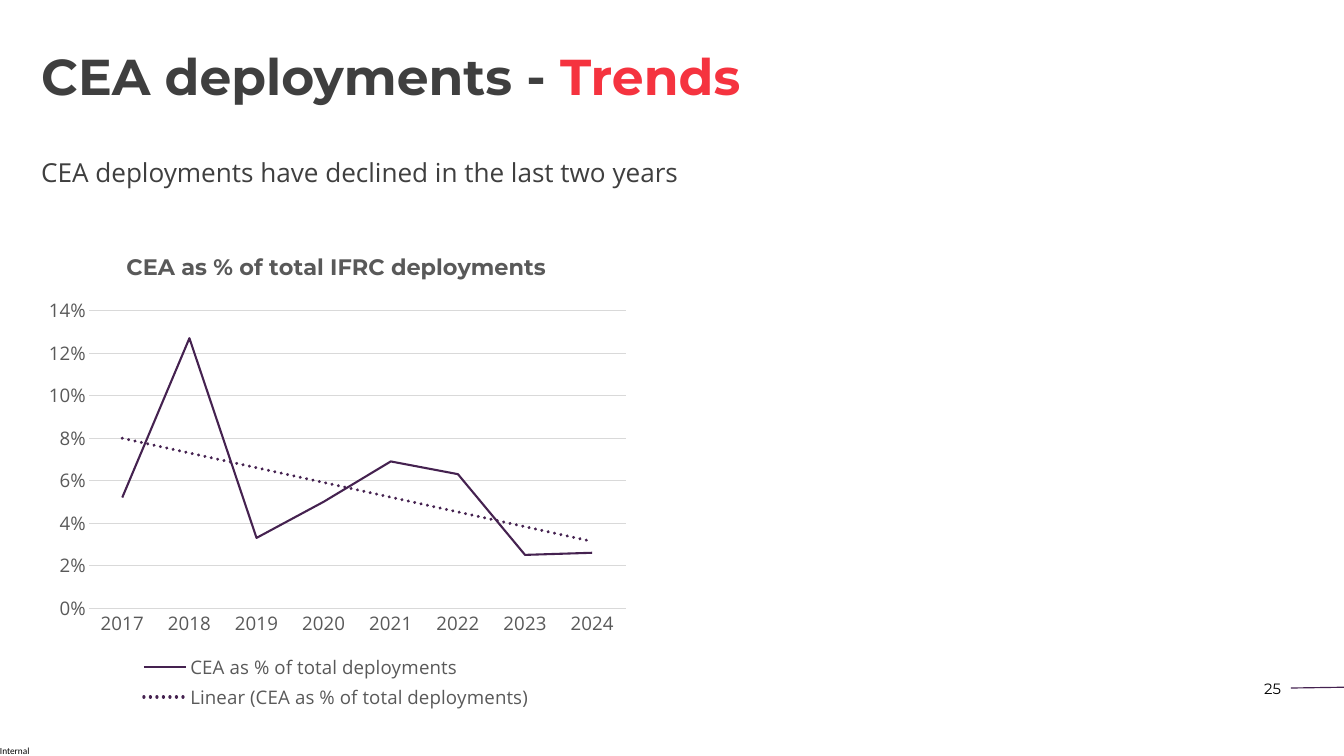
from lxml import etree
from pptx import Presentation
from pptx import util as u
from pptx.chart.data import CategoryChartData
from pptx.dml.color import RGBColor
from pptx.enum import chart as ch, shapes, text
from pptx.oxml import parse_xml
from pptx.oxml.ns import nsdecls, qn

INK, RED, PURPLE, GREY, RULE, BLACK = "3F3F3F", "F5333F", "452250", "595959", "D9D9D9", "000000"
HEADING = [("CEA deployments - ", INK), ("Trends", RED)]
MESSAGE = "CEA deployments have declined in the last two years"
CHART_TITLE = "CEA as % of total IFRC deployments"
SERIES = "CEA as % of total deployments"
SHARES = {"2017": 0.052, "2018": 0.127, "2019": 0.033, "2020": 0.05,
          "2021": 0.069, "2022": 0.063, "2023": 0.025, "2024": 0.026}
PLOT_AREA = {"x": 0.09, "y": 0.16, "w": 0.89, "h": 0.62}
PAGE, LABEL = "25", "Internal"


def colour(value):
    return RGBColor.from_string(value)


def style(font, size, name, ink, bold=False):
    font.size, font.name, font.bold = u.Pt(size), name, bold
    font.color.rgb = colour(ink)


def stroke(line, ink, width):
    line.color.rgb = colour(ink)
    line.width = u.Pt(width)


def place(shape, *box):
    shape.left, shape.top, shape.width, shape.height = map(u.Cm, box)


def add_heading(slide):
    heading = slide.shapes.title
    place(heading, 1.3, 2.01, 39.34, 2.11)
    frame = heading.text_frame
    frame.auto_size = text.MSO_AUTO_SIZE.NONE
    frame.vertical_anchor = text.MSO_ANCHOR.MIDDLE
    line = frame.paragraphs[0]
    line.alignment, line.line_spacing = text.PP_ALIGN.LEFT, 0.8
    for words, ink in HEADING:
        run = line.add_run()
        run.text = words
        style(run.font, 54, "Montserrat", ink, True)


def add_message(slide):
    message = slide.placeholders[1]
    place(message, 1.3, 5.77, 47.7, 1.45)
    frame = message.text_frame
    frame.text = MESSAGE
    frame.auto_size = text.MSO_AUTO_SIZE.NONE
    line = frame.paragraphs[0]
    props = line._p.get_or_add_pPr()
    props.set("marL", "0")
    props.set("indent", "0")
    etree.SubElement(props, qn("a:buNone"))
    line.space_before, line.space_after = u.Pt(0), u.Pt(18)
    style(line.runs[0].font, 28, "Open Sans", INK)


def add_trend_line(series):
    series._element.find(qn("c:cat")).addprevious(parse_xml(
        f'<c:trendline {nsdecls("c", "a")}><c:spPr><a:ln w="{u.Pt(3.5)}" cap="rnd"><a:solidFill>'
        f'<a:srgbClr val="{PURPLE}"/></a:solidFill><a:prstDash val="sysDot"/></a:ln></c:spPr>'
        '<c:trendlineType val="linear"/><c:dispRSqr val="0"/><c:dispEq val="0"/></c:trendline>'))


def fix_plot_area(chart):
    area = chart._chartSpace.chart.plotArea
    for layout in area.findall(qn("c:layout")):
        area.remove(layout)
    sides = "".join(f'<c:{side} val="{share}"/>' for side, share in PLOT_AREA.items())
    area.insert(0, parse_xml(
        f'<c:layout {nsdecls("c")}><c:manualLayout><c:layoutTarget val="inner"/>'
        f'<c:xMode val="edge"/><c:yMode val="edge"/>{sides}</c:manualLayout></c:layout>'))


def add_trend_chart(slide):
    data = CategoryChartData(number_format="0%")
    data.categories = list(SHARES)
    data.add_series(SERIES, list(SHARES.values()))
    box = map(u.Cm, (1.3, 8.84, 22.81, 18.14))
    chart = slide.shapes.add_chart(ch.XL_CHART_TYPE.LINE, *box, data).chart
    style(chart.font, 20, "Open Sans", BLACK)

    chart.has_title = True
    chart.chart_title.include_in_layout = False
    caption = chart.chart_title.text_frame
    caption.text = CHART_TITLE
    style(caption.paragraphs[0].runs[0].font, 24, "Montserrat", GREY, True)

    chart.has_legend = True
    chart.legend.position = ch.XL_LEGEND_POSITION.BOTTOM
    chart.legend.include_in_layout = False
    style(chart.legend.font, 20, "Open Sans", GREY)

    years, shares = chart.category_axis, chart.value_axis
    for axis in (years, shares):
        axis.major_tick_mark = axis.minor_tick_mark = ch.XL_TICK_MARK.NONE
        style(axis.tick_labels.font, 20, "Open Sans", GREY)
    stroke(years.format.line, RULE, 0.75)
    stroke(shares.major_gridlines.format.line, RULE, 0.75)
    shares.format.line.fill.background()
    shares.minimum_scale, shares.maximum_scale, shares.major_unit = 0, 0.14, 0.02
    shares.tick_labels.number_format = "0%"
    shares.tick_labels.number_format_is_linked = False

    plot = chart.plots[0]
    plot.vary_by_categories = False
    series = plot.series[0]
    series.smooth = False
    series.marker.style = ch.XL_MARKER_STYLE.NONE
    stroke(series.format.line, PURPLE, 2.25)
    add_trend_line(series)
    fix_plot_area(chart)


def add_note(slide, words, box, size, name, align, inset):
    frame = slide.shapes.add_textbox(*map(u.Cm, box)).text_frame
    frame.text, frame.word_wrap = words, True
    if not inset:
        frame.margin_left = frame.margin_right = frame.margin_top = frame.margin_bottom = 0
    frame.paragraphs[0].alignment = align
    style(frame.paragraphs[0].runs[0].font, size, name, BLACK)


def add_footer(slide):
    ends = map(u.Cm, (48.79, 26.01, 50.8, 25.98))
    dash = slide.shapes.add_connector(shapes.MSO_CONNECTOR.STRAIGHT, *ends)
    stroke(dash.line, PURPLE, 1.25)
    etree.SubElement(dash._element.spPr, qn("a:effectLst"))
    add_note(slide, PAGE, (46.84, 25.55, 1.83, 0.94), 16, "Montserrat", text.PP_ALIGN.RIGHT, True)
    add_note(slide, LABEL, (0, 28.17, 1.19, 0.43), 10, "Calibri", text.PP_ALIGN.LEFT, False)


def main():
    """Build the CEA deployment trends slide."""
    deck = Presentation()
    deck.slide_width, deck.slide_height = u.Cm(50.8), u.Cm(28.58)
    slide = deck.slides.add_slide(deck.slide_layouts[1])
    add_heading(slide)
    add_message(slide)
    add_trend_chart(slide)
    add_footer(slide)
    deck.save("out.pptx")


if __name__ == "__main__":
    main()
